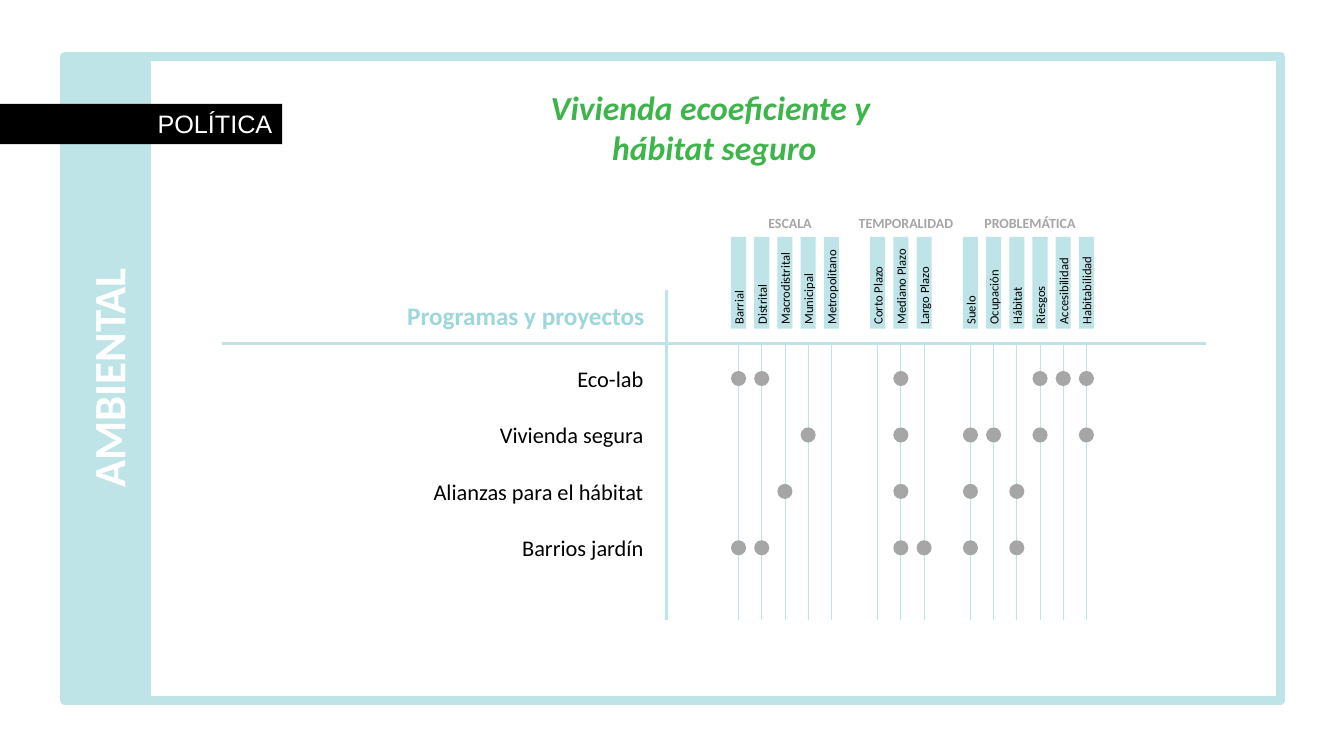
"""Build the housing policy slide with its matrix of programmes and criteria."""
from lxml import etree
from pptx import Presentation
from pptx.dml.color import RGBColor
from pptx.enum.shapes import MSO_CONNECTOR, MSO_SHAPE
from pptx.enum.text import MSO_ANCHOR, PP_ALIGN
from pptx.oxml.ns import qn
from pptx.util import Inches, Pt

RECTANGLE, OVAL = MSO_SHAPE.RECTANGLE, MSO_SHAPE.OVAL
STRAIGHT = MSO_CONNECTOR.STRAIGHT
LEFT, CENTER, RIGHT = PP_ALIGN.LEFT, PP_ALIGN.CENTER, PP_ALIGN.RIGHT
TOP, MIDDLE = MSO_ANCHOR.TOP, MSO_ANCHOR.MIDDLE
AQUA, TEAL, GREEN, GRAY = "BEE4E7", "9DD7DB", "3DB54A", "A6A6A6"
BLACK, WHITE = "000000", "FFFFFF"
colour = RGBColor.from_string

FIRST_COLUMN, COLUMN_STEP = 7.325, 0.23
FIRST_ROW, ROW_STEP = 3.57, 0.56
LABEL_LENGTH, LABEL_HEIGHT, LABEL_TOP = 0.91, 0.15, 2.73
DOT = 0.15

deck = Presentation()
deck.slide_width, deck.slide_height = Inches(13.33), Inches(7.5)
page = deck.slides.add_slide(deck.slide_layouts[6])


def add_block(kind, left, top, width, height, fill):
    """Add a flat filled shape without outline."""
    block = page.shapes.add_shape(kind, Inches(left), Inches(top), Inches(width), Inches(height))
    block.shadow.inherit = False
    block.fill.solid()
    block.fill.fore_color.rgb = colour(fill)
    block.line.fill.background()
    return block


def write(box, text, size, ink, align, bold=False, italic=False, font="Calibri", tight=False):
    """Fill a box with evenly formatted text."""
    frame = box.text_frame
    frame.word_wrap = True
    frame.vertical_anchor = MIDDLE if tight else TOP
    if tight:
        frame.margin_left = Inches(0.04)
        frame.margin_top = frame.margin_right = frame.margin_bottom = 0
    frame.text = text
    for para in frame.paragraphs:
        para.alignment = align
        for span in para.runs:
            span.font.name, span.font.size = font, Pt(size)
            span.font.bold, span.font.italic = bold, italic
            span.font.color.rgb = colour(ink)


for left, width, fill in [(0.64, 12.05, AQUA), (1.46, 11.24, WHITE)]:
    panel = add_block(RECTANGLE, left, 0.56, width, 6.39, fill)
    panel.line.color.rgb = colour(AQUA)
    panel.line.width = Pt(6)

groups = [
    ("ESCALA", 7.36, 0.91, 0,
     ["Barrial", "Distrital", "Macrodistrital", "Municipal", "Metropolitano"]),
    ("TEMPORALIDAD", 8.43, 1.07, 6, ["Corto Plazo", "Mediano Plazo", "Largo Plazo"]),
    ("PROBLEMÁTICA", 9.66, 1.07, 10,
     ["Suelo", "Ocupación", "Hábitat", "Riesgos", "Accesibilidad", "Habitabilidad"]),
]
column_centers = {}
for heading, left, width, first_slot, criteria in groups:
    for slot, criterion in enumerate(criteria, first_slot):
        column_centers[criterion] = FIRST_COLUMN + slot * COLUMN_STEP

rules = [(x, 3.42, x, 6.15, 0.5) for x in column_centers.values()]
rules += [(2.2, 3.41, 11.96, 3.41, 2.25), (6.61, 2.88, 6.61, 6.15, 2.25)]
for x1, y1, x2, y2, weight in rules:
    rule = page.shapes.add_connector(STRAIGHT, Inches(x1), Inches(y1), Inches(x2), Inches(y2))
    rule.line.color.rgb = colour(AQUA)
    rule.line.width = Pt(weight)
    etree.SubElement(rule._element.spPr, qn("a:effectLst"))

for criterion, center in column_centers.items():
    label = add_block(RECTANGLE, center - LABEL_LENGTH / 2, LABEL_TOP,
                      LABEL_LENGTH, LABEL_HEIGHT, AQUA)
    label.rotation = 270
    write(label, criterion, 9, BLACK, LEFT, tight=True)

for heading, left, width, first_slot, criteria in groups:
    box = page.shapes.add_textbox(Inches(left), Inches(2.13), Inches(width), Inches(0.17))
    write(box, heading, 10, GRAY, CENTER, bold=True, tight=True)

programmes = {
    "Eco-lab": ["Barrial", "Distrital", "Mediano Plazo", "Riesgos", "Accesibilidad",
                "Habitabilidad"],
    "Vivienda segura": ["Municipal", "Mediano Plazo", "Suelo", "Ocupación", "Riesgos",
                        "Habitabilidad"],
    "Alianzas para el hábitat": ["Macrodistrital", "Mediano Plazo", "Suelo", "Hábitat"],
    "Barrios jardín": ["Barrial", "Distrital", "Mediano Plazo", "Largo Plazo", "Suelo",
                       "Hábitat"],
}
for row, (programme, marks) in enumerate(programmes.items()):
    top = FIRST_ROW + row * ROW_STEP
    box = page.shapes.add_textbox(Inches(0.97), Inches(top), Inches(5.51), Inches(0.37))
    write(box, programme, 16, BLACK, RIGHT)
    for mark in marks:
        add_block(OVAL, column_centers[mark] - DOT / 2, top + 0.11, DOT, DOT, GRAY)

programmes_heading = page.shapes.add_textbox(Inches(0.97), Inches(2.93), Inches(5.52), Inches(0.4))
write(programmes_heading, "Programas y proyectos", 18, TEAL, RIGHT, bold=True)

title = page.shapes.add_textbox(Inches(1.58), Inches(0.81), Inches(11.01), Inches(0.91))
write(title, "Vivienda ecoeficiente y \nhábitat seguro", 24, GREEN, CENTER, bold=True, italic=True)

side_title = page.shapes.add_textbox(Inches(-2.68), Inches(3.43), Inches(7.5), Inches(0.64))
side_title.rotation = 270
write(side_title, "AMBIENTAL", 32, WHITE, CENTER, bold=True)

policy_tag = add_block(RECTANGLE, 0, 1.03, 2.8, 0.4, BLACK)
write(policy_tag, "POLÍTICA", 18, WHITE, RIGHT, font="Arial")

deck.save("out.pptx")
